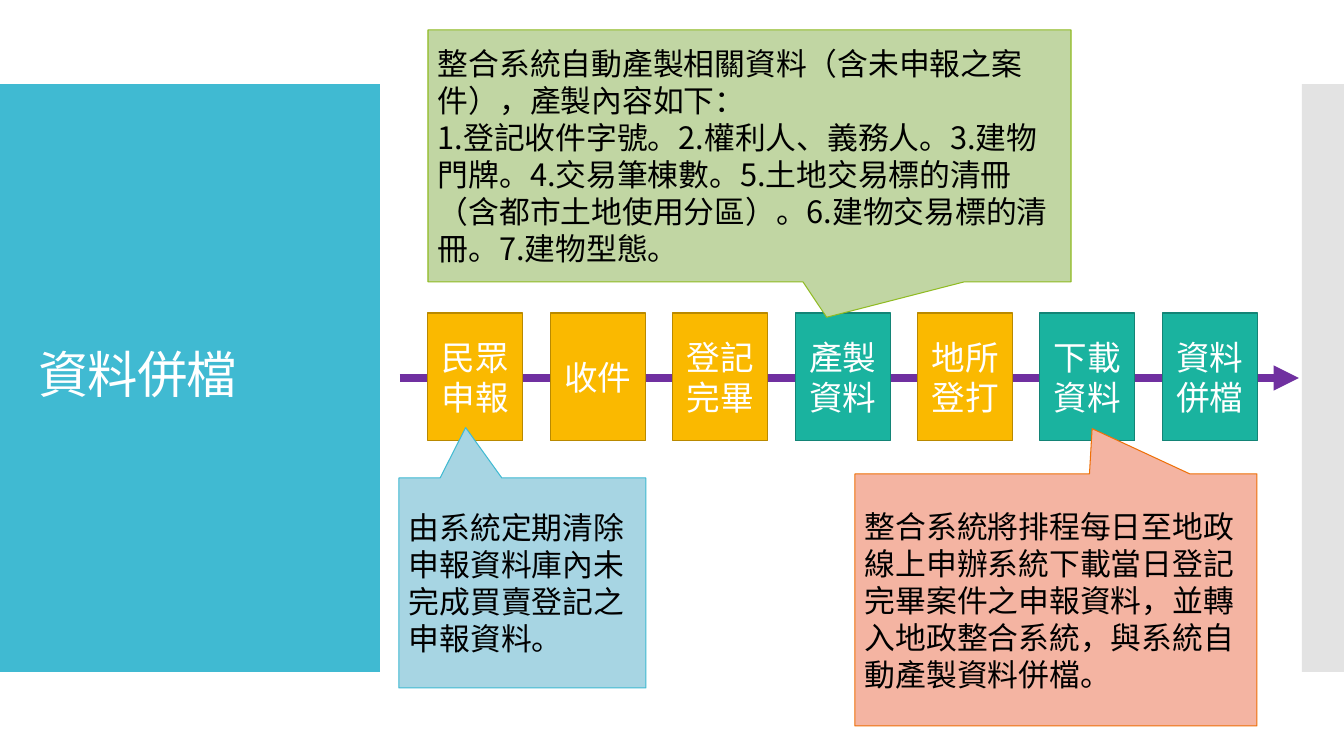
from lxml.etree import SubElement
from pptx import Presentation
from pptx.dml.color import RGBColor
from pptx.enum.shapes import MSO_CONNECTOR, MSO_SHAPE
from pptx.enum.text import MSO_ANCHOR as Anchor, PP_ALIGN as Align
from pptx.oxml.ns import qn
from pptx.util import Pt

EMU_PER_PX = 914400 / 100.8
TITLE_FONT = "Calibri"
BODY_FONT = "Noto Sans CJK SC"
COLORS = {
    "white": "FFFFFF", "black": "000000", "panel": "40BAD2", "edge": "C8C8C8",
    "arrow": "7030A0", "amber": "FAB900", "amber_line": "B98900",
    "teal": "1AB39F", "teal_line": "138476", "green": "C1D6A3", "green_line": "90BB23",
    "coral": "F4B4A2", "coral_line": "EE7008", "sky": "A7D5E3", "sky_line": "40BAD2",
}
STEPS = [
    ("民眾申報", "amber"), ("收件", "amber"), ("登記完畢", "amber"), ("產製資料", "teal"),
    ("地所登打", "amber"), ("下載資料", "teal"), ("資料併檔", "teal"),
]
CALLOUTS = [
    ((428, 30, 643, 252), (0.12, 0.64), "green", [
        "整合系統自動產製相關資料（含未申報之案件），產製內容如下：",
        "1.登記收件字號。2.權利人、義務人。3.建物門牌。4.交易筆棟數。"
        "5.土地交易標的清冊（含都市土地使用分區）。6.建物交易標的清冊。7.建物型態。",
    ]),
    ((855, 474, 402, 252), (0.09, -0.68), "coral", [
        "整合系統將排程每日至地政線上申辦系統下載當日登記完畢案件之申報資料，"
        "並轉入地政整合系統，與系統自動產製資料併檔。",
    ]),
    ((399, 478, 247, 210), (-0.23, -0.74), "sky", [
        "由系統定期清除申報資料庫內未完成買賣登記之申報資料。",
    ]),
]


def px(*lengths):
    return [round(length * EMU_PER_PX) for length in lengths]


def color(name):
    return RGBColor.from_string(COLORS[name])


def write_text(shape, texts, size, font_name, color_name, align):
    frame = shape.text_frame
    frame.word_wrap = True
    frame.vertical_anchor = Anchor.MIDDLE
    frame.text = "\n".join(texts)
    for paragraph in frame.paragraphs:
        paragraph.alignment = align
        paragraph.font.size = Pt(size)
        paragraph.font.name = font_name
        paragraph.font.color.rgb = color(color_name)
        properties = paragraph._p.pPr.find(qn("a:defRPr"))
        SubElement(properties, qn("a:ea"), typeface=BODY_FONT)


def add_box(slide, kind, box, fill, line=None):
    shape = slide.shapes.add_shape(kind, *px(*box))
    shape.shadow.inherit = False
    shape.fill.solid()
    shape.fill.fore_color.rgb = color(fill)
    if line:
        shape.line.color.rgb = color(line)
        shape.line.width = Pt(0.75)
    else:
        shape.line.fill.background()
    return shape


def add_panels(slide):
    add_box(slide, MSO_SHAPE.RECTANGLE, (0, 84, 380, 588), "panel")
    edge = add_box(slide, MSO_SHAPE.RECTANGLE, (1302, 84, 42, 588), "edge")
    edge_color = edge._element.spPr.find(qn("a:solidFill"))[0]
    SubElement(edge_color, qn("a:alpha"), val="50000")


def place_title(slide, text):
    title = slide.shapes.title
    slide.shapes._spTree.append(title._element)
    title.left, title.top, title.width, title.height = px(28, 124, 325, 507)
    write_text(title, [text], 36, TITLE_FONT, "white", Align.LEFT)
    paragraph = title.text_frame.paragraphs[0]
    paragraph.line_spacing = 0.9
    paragraph._p.pPr.find(qn("a:defRPr")).set("spc", "-60")


def add_timeline(slide):
    arrow = slide.shapes.add_connector(MSO_CONNECTOR.STRAIGHT, *px(400, 378, 1299, 378))
    arrow.line.color.rgb = color("arrow")
    arrow.line.width = Pt(6)
    SubElement(arrow.line._get_or_add_ln(), qn("a:tailEnd"), type="triangle")
    SubElement(arrow._element.spPr, qn("a:effectLst"))


def add_step(slide, index, text, fill):
    box = (428 + index * 122.4, 313, 95, 128)
    step = add_box(slide, MSO_SHAPE.RECTANGLE, box, fill, fill + "_line")
    write_text(step, [text], 24, BODY_FONT, "white", Align.CENTER)


def add_callout(slide, box, pointer, fill, texts):
    callout = add_box(slide, MSO_SHAPE.RECTANGULAR_CALLOUT, box, fill, fill + "_line")
    callout.adjustments[0], callout.adjustments[1] = pointer
    write_text(callout, texts, 22, BODY_FONT, "black", Align.LEFT)


def main():
    presentation = Presentation()
    presentation.slide_width, presentation.slide_height = px(1344, 756)
    slide = presentation.slides.add_slide(presentation.slide_layouts[5])
    add_panels(slide)
    place_title(slide, "資料併檔")
    add_timeline(slide)
    for index, (text, fill) in enumerate(STEPS):
        add_step(slide, index, text, fill)
    for callout in CALLOUTS:
        add_callout(slide, *callout)
    presentation.save("out.pptx")


if __name__ == "__main__":
    main()
